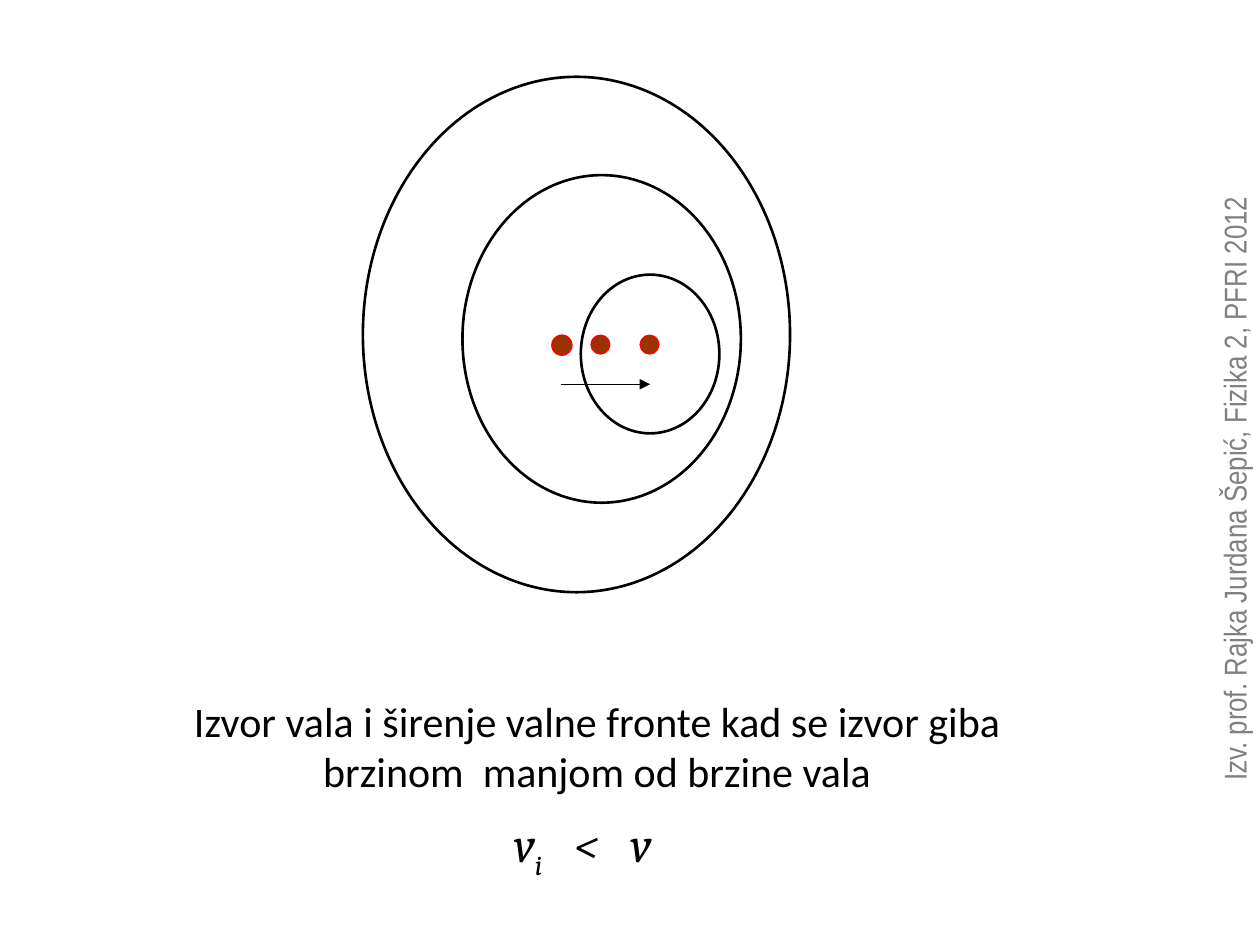
import pptx
import pptx.dml.color
import pptx.enum.shapes
import pptx.enum.text
import pptx.oxml.ns
import pptx.util
from lxml import etree
from pptx.util import Inches

BLACK, RED, BROWN, GREY = "000000", "FF0000", "993300", "808080"

# left, top, width, height in inches
WAVEFRONTS = [
    (2.88, 0.61, 3.39, 4.09),
    (4.61, 2.18, 1.10, 1.26),
    (3.67, 1.39, 2.21, 2.60),
]
SOURCES = [
    (5.08, 2.66, 0.15, 0.15),
    (4.69, 2.66, 0.15, 0.15),
    (4.38, 2.66, 0.16, 0.16),
]
MOTION = (4.45, 3.05, 5.16, 3.05)  # from x, y to x, y

CAPTION = [
    "Izvor vala i širenje valne fronte kad se izvor giba",
    "brzinom  manjom od brzine vala",
]
CREDIT = "Izv. prof. Rajka Jurdana Šepić, Fizika 2, PFRI 2012"
# text, baseline shift in percent, extra letter spacing in points
FORMULA = [
    ("v", 0, 0),
    ("i", -25, 0),
    (" ", 0, 12),
    ("<", 0, 0),
    (" ", 0, 12),
    ("v", 0, 0),
]


def color(value):
    return pptx.dml.color.RGBColor.from_string(value)


def add_circle(slide, place, line, width, fill=None):
    circle = slide.shapes.add_shape(
        pptx.enum.shapes.MSO_SHAPE.OVAL, *map(Inches, place))
    circle.shadow.inherit = False
    circle.line.color.rgb = color(line)
    circle.line.width = pptx.util.Pt(width)
    if fill:
        circle.fill.solid()
        circle.fill.fore_color.rgb = color(fill)
    else:
        circle.fill.background()


def add_arrow(slide, ends):
    arrow = slide.shapes.add_connector(
        pptx.enum.shapes.MSO_CONNECTOR.STRAIGHT, *map(Inches, ends))
    arrow.line.color.rgb = color(BLACK)
    arrow.line.width = pptx.util.Pt(0.75)
    line = arrow.line._get_or_add_ln()
    etree.SubElement(line, pptx.oxml.ns.qn("a:tailEnd"), type="triangle")
    etree.SubElement(arrow._element.spPr, pptx.oxml.ns.qn("a:effectLst"))


def add_box(slide, place):
    box = slide.shapes.add_textbox(*map(Inches, place))
    box.text_frame.word_wrap = False
    box.text_frame.auto_size = pptx.enum.text.MSO_AUTO_SIZE.SHAPE_TO_FIT_TEXT
    return box


def add_span(para, text, font, size, ink):
    span = para.add_run()
    span.text = text
    span.font.name = font
    span.font.size = pptx.util.Pt(size)
    span.font.color.rgb = color(ink)
    return span


def add_caption(slide):
    frame = add_box(slide, (1.41, 5.47, 6.66, 0.91)).text_frame
    for index, text in enumerate(CAPTION):
        para = frame.add_paragraph() if index else frame.paragraphs[0]
        para.alignment = pptx.enum.text.PP_ALIGN.CENTER
        add_span(para, text, "Calibri", 24, BLACK)


def add_formula(slide):
    para = add_box(slide, (3.98, 6.41, 1.52, 0.57)).text_frame.paragraphs[0]
    for text, baseline, spacing in FORMULA:
        span = add_span(para, text, "Cambria", 28, BLACK)
        span.font.italic = True
        properties = span.font._element
        if baseline:
            properties.set("baseline", str(baseline * 1000))
        if spacing:
            properties.set("spc", str(spacing * 100))


def add_credit(slide):
    box = add_box(slide, (7.35, 3.65, 4.89, 0.4))
    box.rotation = 270
    add_span(box.text_frame.paragraphs[0], CREDIT, "Arial Narrow", 18, GREY)


def main():
    deck = pptx.Presentation()
    deck.slide_width, deck.slide_height = Inches(10), Inches(7.5)
    page = deck.slides.add_slide(deck.slide_layouts[6])
    for place in WAVEFRONTS:
        add_circle(page, place, BLACK, 1.5)
    for place in SOURCES:
        add_circle(page, place, RED, 0.75, BROWN)
    add_arrow(page, MOTION)
    add_caption(page)
    add_formula(page)
    add_credit(page)
    deck.save("out.pptx")


if __name__ == "__main__":
    main()
